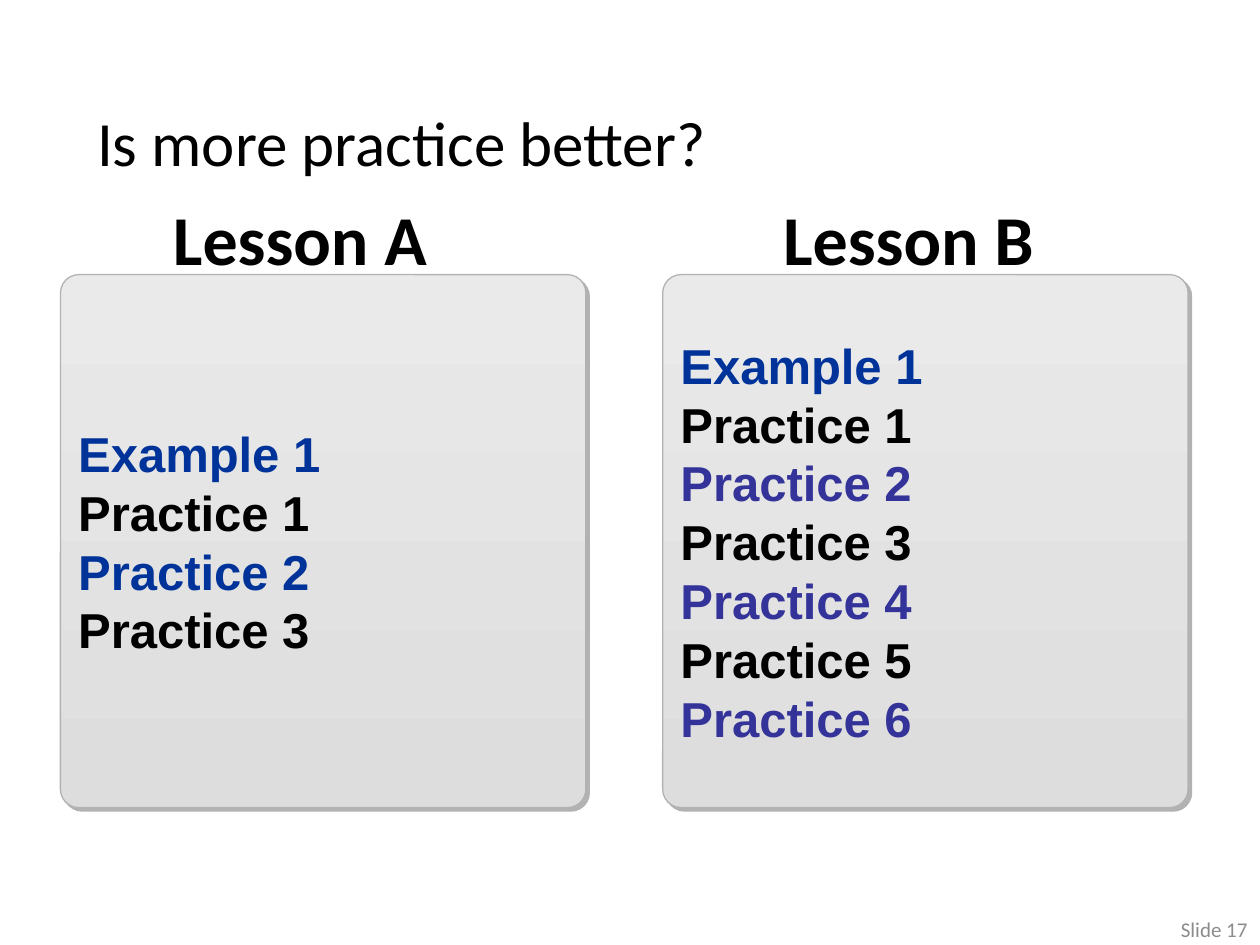
import lxml.etree
import pptx
import pptx.dml.color
import pptx.enum.shapes
import pptx.enum.text
import pptx.oxml.ns
import pptx.util

WIDTH, HEIGHT = 10, 7.5
COLUMN_LEFT, COLUMN_STEP = 0.48, 4.78
PANEL_TOP, PANEL_WIDTH, PANEL_HEIGHT = 2.18, 4.17, 4.23
ALIGN = pptx.enum.text.PP_ALIGN
ANCHOR = pptx.enum.text.MSO_ANCHOR
BLUE, INDIGO, BLACK = "003399", "333399", "000000"


def color(value):
    return pptx.dml.color.RGBColor.from_string(value)


def inches(*lengths):
    return [pptx.util.Inches(length) for length in lengths]


def write_lines(shape, lines, size, font, bold=False, align=ALIGN.LEFT, anchor=ANCHOR.MIDDLE):
    frame = shape.text_frame
    frame.word_wrap = True
    frame.auto_size = pptx.enum.text.MSO_AUTO_SIZE.NONE
    frame.vertical_anchor = anchor
    frame.text = "\n".join(text for text, _ in lines)
    for paragraph, (_, tint) in zip(frame.paragraphs, lines):
        paragraph.alignment = align
        paragraph.font.size = pptx.util.Pt(size)
        paragraph.font.name = font
        paragraph.font.bold = bold
        paragraph.font.color.rgb = color(tint)


def add_title(slide, text):
    title = slide.shapes.title
    title.left, title.top, title.width, title.height = inches(0.67, 0.75, WIDTH - 0.67, 0.75)
    write_lines(title, [(text, BLACK)], 36, "Calibri")


def add_heading(slide, column, text):
    left = COLUMN_LEFT + 0.44 + column * 4.83
    heading = slide.shapes.add_textbox(*inches(left, 1.5, 2.92, 0.8))
    write_lines(heading, [(text, BLACK)], 40, "Calibri", True, ALIGN.CENTER, ANCHOR.TOP)


def add_shadow(shape, tint, distance):
    shape.shadow.inherit = False
    qualified = pptx.oxml.ns.qn
    effects = shape._element.spPr.find(qualified("a:effectLst"))
    shadow = lxml.etree.SubElement(
        effects, qualified("a:outerShdw"), dist=str(pptx.util.Pt(distance)),
        dir="2700000", algn="ctr", rotWithShape="0")
    lxml.etree.SubElement(shadow, qualified("a:srgbClr"), val=tint)


def add_panel(slide, column, lines):
    left = COLUMN_LEFT + column * COLUMN_STEP
    panel = slide.shapes.add_shape(
        pptx.enum.shapes.MSO_SHAPE.ROUNDED_RECTANGLE,
        *inches(left, PANEL_TOP, PANEL_WIDTH, PANEL_HEIGHT))
    panel.adjustments[0] = 0.035
    panel.fill.gradient()
    panel.fill.gradient_angle = 270
    for stop, tint, position in zip(panel.fill.gradient_stops, ("EAEAEA", "DDDDDD"), (0, 1)):
        stop.color.rgb = color(tint)
        stop.position = position
    panel.line.color.rgb = color("B2B2B2")
    panel.line.width = pptx.util.Pt(0.75)
    add_shadow(panel, "B2B2B2", 2.8)
    write_lines(panel, lines, 28, "Arial", True)


def lesson_lines(practice_count, even_tint):
    practices = [(f"Practice {number}", BLACK if number % 2 else even_tint)
                 for number in range(1, practice_count + 1)]
    return [("Example 1", BLUE)] + practices


def add_slide_number(slide, text):
    width, height = 1.42, 0.33
    box = slide.shapes.add_textbox(*inches(WIDTH - width, 7.21, width, height))
    write_lines(box, [(text, "8C8C8C")], 12, "Calibri", align=ALIGN.RIGHT)


def main():
    presentation = pptx.Presentation()
    presentation.slide_width, presentation.slide_height = inches(WIDTH, HEIGHT)
    slide = presentation.slides.add_slide(presentation.slide_layouts[5])
    add_title(slide, "Is more practice better?")
    lessons = [("Lesson A", 3, BLUE), ("Lesson B", 6, INDIGO)]
    for column, (name, practice_count, even_tint) in enumerate(lessons):
        add_heading(slide, column, name)
        add_panel(slide, column, lesson_lines(practice_count, even_tint))
    add_slide_number(slide, "Slide 17")
    presentation.save("out.pptx")


if __name__ == "__main__":
    main()
